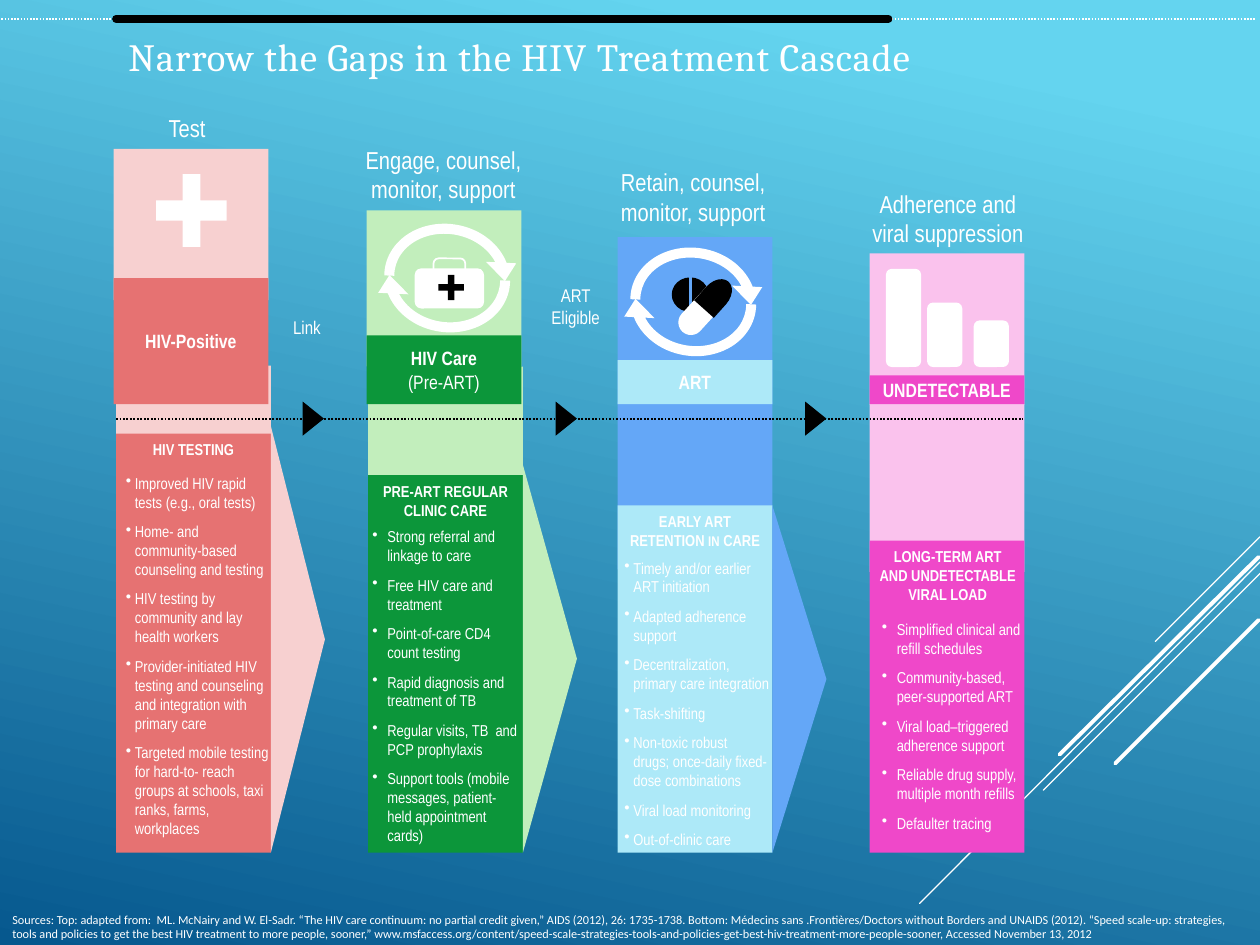
from dataclasses import dataclass
from typing import NamedTuple, Optional

from lxml import etree
from pptx import Presentation
from pptx import util as u
from pptx.dml.color import RGBColor
from pptx.enum import dml, shapes, text
from pptx.oxml import ns

WHITE, BLACK = RGBColor(0xFF, 0xFF, 0xFF), RGBColor(0, 0, 0)
SKY, OCEAN = RGBColor(0x64, 0xD4, 0xEF), RGBColor(0x06, 0x58, 0x8E)
RED, PALE_RED = RGBColor(0xE6, 0x72, 0x72), RGBColor(0xF7, 0xD0, 0xD0)
GREEN, PALE_GREEN = RGBColor(0x0C, 0x96, 0x3A), RGBColor(0xC2, 0xEE, 0xBC)
ICE, BLUE = RGBColor(0xAD, 0xE9, 0xF8), RGBColor(0x64, 0xA7, 0xF7)
PINK, PALE_PINK = RGBColor(0xEF, 0x48, 0xC9), RGBColor(0xFA, 0xC2, 0xED)
SHAPE = shapes.MSO_SHAPE
CENTER, MIDDLE = text.PP_ALIGN.CENTER, text.MSO_ANCHOR.MIDDLE
DOTS = dml.MSO_LINE.ROUND_DOT

# Shared measures, in cm
COLUMN_W, LABEL_BOTTOM, CARD_BOTTOM = 3.12, 8.15, 17.19
TIMELINE_Y, POINT_DEPTH, TOP_RULE_Y = 8.44, 1.09, 0.38


class Box(NamedTuple):
    x: float
    y: float
    w: float
    h: float


class Run(NamedTuple):
    text: str
    size: float
    bold: bool = False
    font: str = "Arial Narrow"


@dataclass
class Column:
    x: float
    top_x: float
    icon: tuple[float, float]    # top and height of the upper pale panel
    band: tuple[float, float]    # top and height of the lower pale panel
    label_top: float
    card_top: float
    dark: RGBColor
    pale: RGBColor
    title: str
    title_box: Box
    label: list[Run]
    heading: list[list[Run]]
    bullets: list[str]
    bullet_box: Box
    indent: float
    point_top: Optional[float] = None
    heading_box: Optional[Box] = None


def set_all(obj, formats: dict) -> None:
    for name, value in formats.items():
        setattr(obj, name, value)


def write(sp, paragraphs: list[list[Run]], frame: Optional[dict] = None,
          para: Optional[dict] = None, indent: float = 0) -> None:
    tf = sp.text_frame
    set_all(tf, {"word_wrap": True, **(frame or {})})
    for i, runs in enumerate(paragraphs):
        p = tf.add_paragraph() if i else tf.paragraphs[0]
        set_all(p, para or {})
        if indent:
            pPr = p._p.get_or_add_pPr()
            pPr.set("marL", str(u.Cm(indent)))
            pPr.set("indent", str(-u.Cm(indent)))
            etree.SubElement(pPr, ns.qn("a:buChar")).set("char", "•")
        for item in runs:
            r = p.add_run()
            r.text = item.text
            set_all(r.font, {"name": item.font, "size": u.Pt(item.size), "bold": item.bold})
            r.font.color.rgb = WHITE


def text_box(s, box: Box, paragraphs: list[list[Run]], para: Optional[dict] = None,
             indent: float = 0, frame: Optional[dict] = None):
    sp = s.shapes.add_textbox(*map(u.Cm, box))
    write(sp, paragraphs, frame, para, indent)
    return sp


def draw(s, kind, box: Box, fill: Optional[RGBColor], line: Optional[RGBColor] = None,
         rotation: float = 0, adjust: tuple = ()):
    sp = s.shapes.add_shape(kind, *map(u.Cm, box))
    set_all(sp, {"rotation": rotation})
    sp.shadow.inherit = False
    for part, color in ((sp.fill, fill), (sp.line.fill, line)):
        if color is None:
            part.background()
        else:
            part.solid()
            part.fore_color.rgb = color
    if line is not None:
        sp.line.width = u.Pt(1)
    for i, value in enumerate(adjust):
        sp.adjustments[i] = value
    return sp


def rule(s, x1: float, y1: float, x2: float, y2: float, color: RGBColor, width: float,
         dash=None, cap: str = "flat") -> None:
    c = s.shapes.add_connector(shapes.MSO_CONNECTOR.STRAIGHT, *map(u.Cm, (x1, y1, x2, y2)))
    c.line.color.rgb = color
    set_all(c.line, {"width": u.Pt(width), "dash_style": dash})
    c.line._ln.set("cap", cap)
    etree.SubElement(c._element.spPr, ns.qn("a:effectLst"))


def pointer(s, x: float, cy: float, length: float, depth: float, fill: RGBColor) -> None:
    """Right-pointing triangle whose base stands at x."""
    box = Box(x + (depth - length) / 2, cy - depth / 2, length, depth)
    draw(s, SHAPE.ISOSCELES_TRIANGLE, box, fill, rotation=90)


def cycle(s, x: float, y: float) -> None:
    for turn in (188.8, 8.8):
        draw(s, SHAPE.CIRCULAR_ARROW, Box(x, y, 2.95, 2.59), WHITE, rotation=turn,
             adjust=(0.078, 11.423, 201.111, 104.173, 0.118))


def cross(s, box: Box, fill: RGBColor) -> None:
    draw(s, SHAPE.CROSS, box, fill, adjust=(0.374,))


def draw_column(s, c: Column) -> None:
    for x, (top, height) in ((c.x, c.band), (c.top_x, c.icon)):
        draw(s, SHAPE.RECTANGLE, Box(x, top, COLUMN_W, height), c.pale)
    label = draw(s, SHAPE.RECTANGLE,
                 Box(c.top_x, c.label_top, COLUMN_W, LABEL_BOTTOM - c.label_top), c.dark)
    write(label, [[r] for r in c.label], {"vertical_anchor": MIDDLE}, {"alignment": CENTER})
    text_box(s, c.title_box, [[Run(c.title, 14)]], {"alignment": CENTER})
    card = draw(s, SHAPE.RECTANGLE,
                Box(c.x, c.card_top, COLUMN_W, CARD_BOTTOM - c.card_top), c.dark)
    if c.heading_box:
        text_box(s, c.heading_box, c.heading, {"alignment": CENTER})
    else:
        write(card, c.heading, {"vertical_anchor": text.MSO_ANCHOR.TOP}, {"alignment": CENTER})
    if c.point_top:
        pointer(s, c.x + COLUMN_W, (c.point_top + CARD_BOTTOM) / 2,
                CARD_BOTTOM - c.point_top, POINT_DEPTH, c.pale)
    text_box(s, c.bullet_box, [[Run(b, 9)] for b in c.bullets],
             {"space_after": u.Pt(6)}, c.indent)


COLUMNS = [
    Column(2.34, 2.29, (3, 3.05), (7.37, 3.05), 5.61, 8.74, RED, PALE_RED,
           "Test", Box(2.08, 2.16, 3.38, 0.86), [Run("HIV-Positive", 11, True)],
           [[Run("HIV TESTING", 9, True)]],
           ["Improved HIV rapid tests (e.g., oral tests)",
            "Home- and community-based counseling and testing",
            "HIV testing by community and lay health workers",
            "Provider-initiated HIV testing and counseling and integration with primary care",
            "Targeted mobile testing for hard-to- reach groups at schools, taxi ranks, farms, workplaces"],
           Box(2.29, 9.42, 3.38, 7.65), 0.18, 8.59),
    Column(7.42, 7.39, (4.24, 3.15), (7.39, 3.15), 6.76, 9.58, GREEN, PALE_GREEN,
           "Engage, counsel, monitor, support", Box(6.55, 2.79, 4.78, 1.45),
           [Run("HIV Care", 11, True), Run("(Pre-ART)", 11)],
           [[Run("PRE-ART REGULAR CLINIC CARE", 9, True)]],
           ["Strong referral and linkage to care", "Free HIV care and treatment",
            "Point-of-care CD4 count testing", "Rapid diagnosis and treatment of TB",
            "Regular visits, TB  and PCP prophylaxis",
            "Support tools (mobile messages, patient-held appointment cards)"],
           Box(7.26, 10.5, 3.48, 6.71), 0.3, 9.37),
    Column(12.45, 12.45, (4.78, 3.38), (8.1, 3.38), 7.26, 10.19, ICE, BLUE,
           "Retain, counsel, monitor, support", Box(11.56, 3.25, 4.83, 1.45),
           [Run("ART", 11, True)],
           [[Run("EARLY ART RETENTION ", 9, True), Run("IN", 8, True), Run(" CARE", 9, True)]],
           ["Timely and/or earlier ART initiation", "Adapted adherence support",
            "Decentralization, primary care integration", "Task-shifting",
            "Non-toxic robust  drugs; once-daily fixed-dose combinations",
            "Viral load monitoring", "Out-of-clinic care"],
           Box(12.34, 11.13, 3.43, 6.15), 0.18, 10.19),
    Column(17.53, 17.53, (5.11, 3.05), (8.15, 3.38), 7.57, 10.9, PINK, PALE_PINK,
           "Adherence and viral suppression", Box(17.09, 3.68, 4.04, 1.45),
           [Run("UNDETECTABLE", 11, True)],
           [[Run(t, 9, True)] for t in ("LONG-TERM ART", "AND UNDETECTABLE", "VIRAL LOAD")],
           ["Simplified clinical and refill schedules", "Community-based, peer-supported ART",
            "Viral load–triggered adherence support",
            "Reliable drug supply, multiple month refills", "Defaulter tracing"],
           Box(17.53, 12.37, 3.3, 4.57), 0.3, heading_box=Box(16.97, 10.9, 4.27, 1.42)),
]
SOURCES = (
    "Sources: Top: adapted from:  ML. McNairy and W. El-Sadr. “The HIV care continuum: no partial "
    "credit given,” AIDS (2012), 26: 1735-1738. Bottom: Médecins sans .Frontières/Doctors without "
    "Borders and UNAIDS (2012). “Speed scale-up: strategies, tools and policies to get the best HIV "
    "treatment to more people, sooner,” www.msfaccess.org/content/speed-scale-strategies-tools-and-"
    "policies-get-best-hiv-treatment-more-people-sooner, Accessed November 13, 2012")


def main() -> None:
    prs = Presentation()
    set_all(prs, {"slide_width": u.Cm(25.4), "slide_height": u.Cm(19.05)})
    s = prs.slides.add_slide(prs.slide_layouts[6])

    # Background and diagonal decoration
    bg = s.background.fill
    bg.gradient()
    bg.gradient_angle = 258
    for stop, color, position in zip(bg.gradient_stops, (SKY, OCEAN), (0.1, 1)):
        stop.color.rgb = color
        stop.position = position
    for x1, y1, x2, y2, width in ((25.4, 10.82, 23.29, 12.93, 0.75),
                                  (25.4, 11.33, 18.54, 18.21, 0.75),
                                  (25.4, 11.56, 21.03, 15.93, 0.75),
                                  (25.37, 11.23, 21.36, 15.21, 2.25),
                                  (25.37, 12.5, 22.48, 15.39, 2.25)):
        rule(s, x1, y1, x2, y2, WHITE, width, cap="rnd")

    # Title
    title = text_box(s, Box(2.34, 0.38, 22, 1.52),
                     [[Run("Narrow the Gaps in the HIV Treatment Cascade", 22, font="Cambria")]],
                     frame={"vertical_anchor": MIDDLE})
    title.text_frame.paragraphs[0].runs[0].font._element.set("spc", "60")

    # Cascade columns
    for column in COLUMNS:
        draw_column(s, column)

    # Icons: test cross, first-aid kit, heart with pill, falling bars
    cross(s, Box(3.15, 3.51, 1.42, 1.47), WHITE)
    cycle(s, 7.54, 4.31)
    draw(s, SHAPE.ROUNDED_RECTANGLE, Box(8.36, 5.41, 1.4, 0.81), WHITE)
    draw(s, SHAPE.ROUNDED_RECTANGLE, Box(8.74, 5.21, 0.64, 0.61), None, WHITE)
    cross(s, Box(8.84, 5.54, 0.51, 0.51), BLACK)
    cycle(s, 12.5, 4.79)
    draw(s, SHAPE.OVAL, Box(13.56, 5.61, 0.71, 0.66), BLACK, BLACK)
    rule(s, 13.92, 5.54, 13.92, 6.3, BLUE, 2.25)
    draw(s, SHAPE.ROUNDED_RECTANGLE, Box(13.92, 5.61, 0.51, 1.24), WHITE,
         rotation=42.4, adjust=(0.5,))
    draw(s, SHAPE.FLOWCHART_DELAY, Box(14.07, 5.69, 0.74, 0.53), BLACK, rotation=311.8)
    for x, height in ((17.86, 1.98), (18.69, 1.3), (19.63, 0.94)):
        draw(s, SHAPE.ROUNDED_RECTANGLE, Box(x, 7.4 - height, 0.71, height), WHITE)

    # Timeline with its step labels
    rule(s, 2.34, TIMELINE_Y, 20.62, TIMELINE_Y, BLACK, 1, DOTS)
    for x in (6.1, 11.2, 16.23):
        pointer(s, x, TIMELINE_Y, 0.69, 0.43, BLACK)
    text_box(s, Box(5.66, 6.25, 2.13, 0.71), [[Run("Link", 10.5)]])
    text_box(s, Box(10.54, 5.61, 2.13, 1.19), [[Run("ART Eligible", 10.5)]],
             {"alignment": CENTER})

    # Sources and top rule
    text_box(s, Box(0, 18.26, 25.4, 0.86), [[Run(SOURCES, 7, font="Calibri")]])
    for x1, x2 in ((0.03, 2.34), (12.34, 25.32)):
        rule(s, x1, TOP_RULE_Y, x2, TOP_RULE_Y, WHITE, 0.9, DOTS)
    rule(s, 2.34, TOP_RULE_Y, 17.91, TOP_RULE_Y, BLACK, 4.5, cap="rnd")

    prs.save("out.pptx")


if __name__ == "__main__":
    main()
